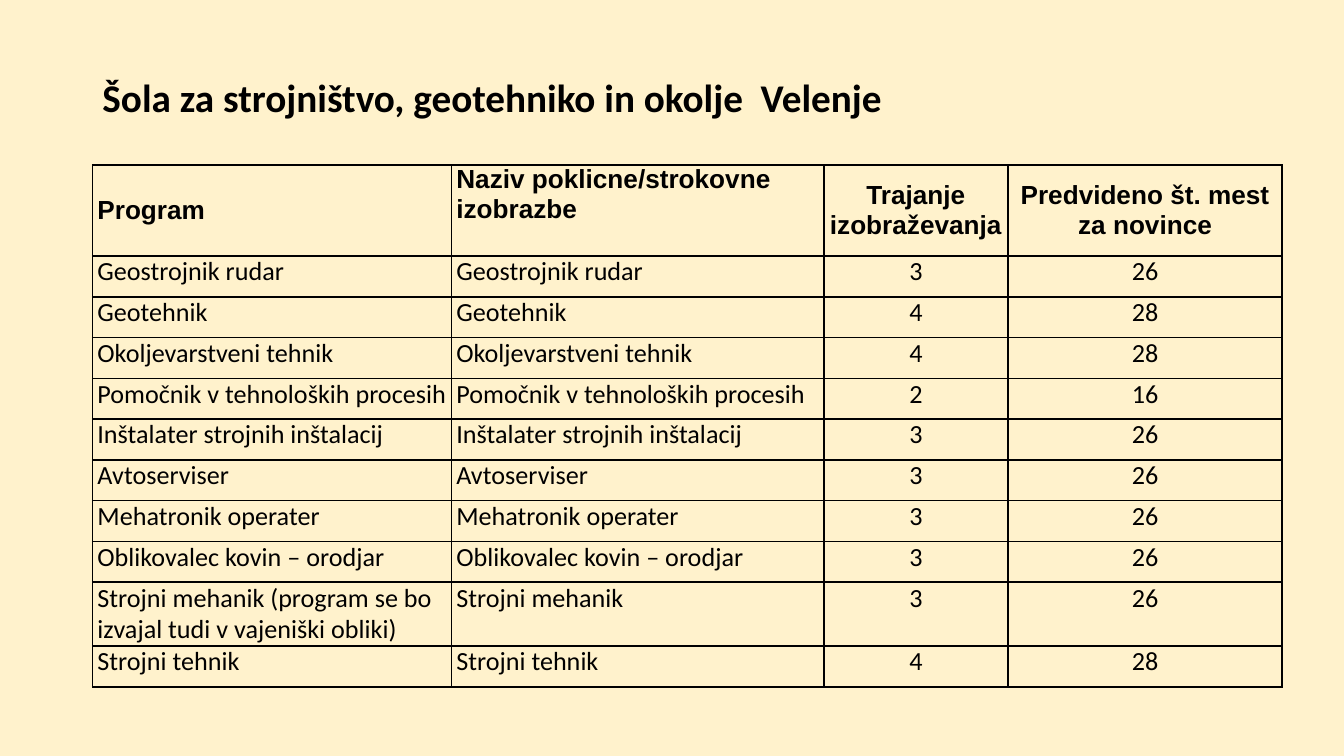
from lxml import etree
from pptx import Presentation
from pptx.dml.color import RGBColor
from pptx.enum.text import MSO_ANCHOR, PP_ALIGN
from pptx.oxml.ns import qn
from pptx.util import Pt

LEFT, CENTER = PP_ALIGN.LEFT, PP_ALIGN.CENTER
TOP, MIDDLE = MSO_ANCHOR.TOP, MSO_ANCHOR.MIDDLE

COLORS = {"background": "FFF2CC", "text": "000000", "border": "000000"}

TITLE = "Šola za strojništvo, geotehniko in okolje  Velenje"
HEADERS = [
    ("Program", MIDDLE),
    ("Naziv poklicne/strokovne izobrazbe", TOP),
    ("Trajanje izobraževanja", MIDDLE),
    ("Predvideno št. mest za novince", MIDDLE),
]
# Qualification, years of schooling, places
PROGRAMS = [
    ("Geostrojnik rudar", 3, 26),
    ("Geotehnik", 4, 28),
    ("Okoljevarstveni tehnik", 4, 28),
    ("Pomočnik v tehnoloških procesih", 2, 16),
    ("Inštalater strojnih inštalacij", 3, 26),
    ("Avtoserviser", 3, 26),
    ("Mehatronik operater", 3, 26),
    ("Oblikovalec kovin – orodjar", 3, 26),
    ("Strojni mehanik", 3, 26),
    ("Strojni tehnik", 4, 28),
]
PROGRAM_NOTES = {"Strojni mehanik": " (program se bo izvajal tudi v vajeniški obliki)"}

COLUMN_WIDTHS = [192.3, 199.5, 98.6, 147]
COLUMN_ALIGNS = [LEFT, LEFT, CENTER, CENTER]
HEADER_HEIGHT, ROW_HEIGHT, NOTE_ROW_HEIGHT = 48.7, 21.86, 34.2
TABLE_LEFT, TABLE_TOP = 49.6, 88.4


def write(frame, text, size=14, font="Calibri", bold=False, align=LEFT, spacing=1.0):
    para = frame.paragraphs[0]
    para.alignment = align
    para.line_spacing = spacing
    span = para.add_run()
    span.text = text
    span.font.size = Pt(size)
    span.font.name = font
    span.font.bold = bold
    span.font.color.rgb = RGBColor.from_string(COLORS["text"])


def set_margins(target, horizontal, vertical):
    target.margin_left = target.margin_right = Pt(horizontal)
    target.margin_top = target.margin_bottom = Pt(vertical)


def add_borders(cell, width=1):
    properties = cell._tc.get_or_add_tcPr()
    for side in ("lnL", "lnR", "lnT", "lnB"):
        line = etree.SubElement(properties, qn(f"a:{side}"), w=str(Pt(width)))
        fill = etree.SubElement(line, qn("a:solidFill"))
        etree.SubElement(fill, qn("a:srgbClr"), val=COLORS["border"])


def add_title(page):
    box = page.shapes.add_textbox(Pt(49.6), Pt(14.4), Pt(620.6), Pt(78.5))
    frame = box.text_frame
    frame.word_wrap = True
    frame.vertical_anchor = MIDDLE
    set_margins(frame, 5.3, 2.7)
    write(frame, TITLE, size=21, bold=True, spacing=0.9)


def add_program_table(page):
    heights = [HEADER_HEIGHT] + [
        NOTE_ROW_HEIGHT if name in PROGRAM_NOTES else ROW_HEIGHT
        for name, _, _ in PROGRAMS
    ]
    table = page.shapes.add_table(
        len(heights), len(COLUMN_WIDTHS), Pt(TABLE_LEFT), Pt(TABLE_TOP),
        Pt(sum(COLUMN_WIDTHS)), Pt(sum(heights)),
    ).table
    table.first_row = table.horz_banding = False
    for column, width in zip(table.columns, COLUMN_WIDTHS):
        column.width = Pt(width)
    for row, height in zip(table.rows, heights):
        row.height = Pt(height)

    body = [
        [(str(value), TOP) for value in (name + PROGRAM_NOTES.get(name, ""), name, years, places)]
        for name, years, places in PROGRAMS
    ]
    for row_index, entries in enumerate([HEADERS] + body):
        is_header = row_index == 0
        for column_index, (text, anchor) in enumerate(entries):
            cell = table.cell(row_index, column_index)
            add_borders(cell)
            cell.fill.background()
            cell.vertical_anchor = anchor
            set_margins(cell, 2.6, 0)
            write(cell.text_frame, text, font="Arial" if is_header else "Calibri",
                  bold=is_header, align=COLUMN_ALIGNS[column_index])


def main():
    deck = Presentation()
    deck.slide_width, deck.slide_height = Pt(720), Pt(405)
    page = deck.slides.add_slide(deck.slide_layouts[6])
    page.background.fill.solid()
    page.background.fill.fore_color.rgb = RGBColor.from_string(COLORS["background"])
    add_title(page)
    add_program_table(page)
    deck.save("out.pptx")


if __name__ == "__main__":
    main()
